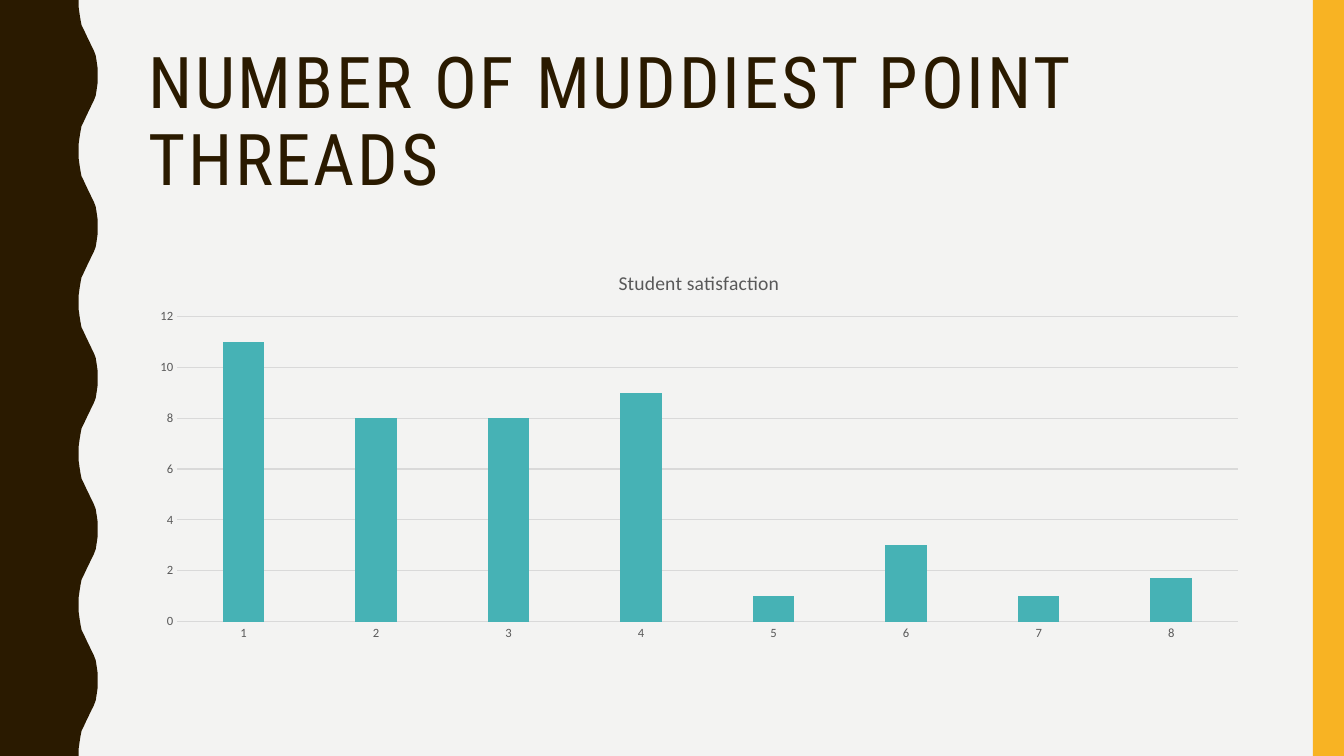
from pptx import Presentation
from pptx.chart.data import CategoryChartData
from pptx.dml.color import RGBColor
from pptx.enum import chart as chart_enum, shapes, text
from pptx.util import Pt

WIDTH, HEIGHT = 960, 540
BROWN, AMBER, TEAL = "2A1A00", "F8B323", "46B2B5"
PAPER, GREY, RULE = "F3F3F2", "595959", "D9D9D9"
HALF_WAVE = [(56.2, 0), (56.2, 5), (56.9, 10), (57.6, 14.4), (58.3, 18),
             (59.8, 21), (61.2, 24), (62.6, 27), (64.1, 30), (65.5, 33),
             (67, 36), (68.4, 39.6), (69.1, 44), (69.8, 49), (69.8, 54)]
THREADS = [11, 8, 8, 9, 1, 3, 1, 1.7]


def color(hex_code):
    """Return the colour for a hex string."""
    return RGBColor.from_string(hex_code)


def paint(shape, hex_code):
    """Give a shape a flat fill without line or shadow."""
    shape.fill.solid()
    shape.fill.fore_color.rgb = color(hex_code)
    shape.line.fill.background()
    shape.shadow.inherit = False


def style_font(font, name, size, hex_code):
    """Set the name, size and colour of a plain font."""
    font.name, font.size, font.bold = name, Pt(size), False
    font.color.rgb = color(hex_code)


def add_wavy_edge(slide, left, top, height):
    """Draw the brown band with a wavy right side."""
    period = 2 * HALF_WAVE[-1][1]
    wave = HALF_WAVE + [(x, period - y) for x, y in reversed(HALF_WAVE[:-1])]
    points = [(left + x, top + cycle * period + y)
              for cycle in range(int(height / period)) for x, y in wave]
    points.append((left, top + height))
    builder = slide.shapes.build_freeform(Pt(left), Pt(top), scale=1)
    builder.add_line_segments([(Pt(x), Pt(y)) for x, y in points], close=True)
    paint(builder.convert_to_shape(), BROWN)


def add_side_bar(slide, left, top, width, height):
    """Draw the amber bar."""
    bar = slide.shapes.add_shape(shapes.MSO_SHAPE.RECTANGLE,
                                 Pt(left), Pt(top), Pt(width), Pt(height))
    paint(bar, AMBER)


def add_title(slide, words, left, top, width, height):
    """Place and format the title placeholder."""
    title = slide.shapes.title
    title.left, title.top = Pt(left), Pt(top)
    title.width, title.height = Pt(width), Pt(height)
    frame = title.text_frame
    frame.text = words
    frame.word_wrap = True
    frame.auto_size = text.MSO_AUTO_SIZE.NONE
    frame.vertical_anchor = text.MSO_ANCHOR.MIDDLE
    paragraph = frame.paragraphs[0]
    paragraph.alignment = text.PP_ALIGN.LEFT
    paragraph.line_spacing = 0.9
    run = paragraph.runs[0]
    style_font(run.font, "Roboto Condensed", 51, BROWN)
    run.font._element.set("spc", "200")


def style_axis(axis):
    """Give an axis small grey labels without tick marks."""
    axis.major_tick_mark = axis.minor_tick_mark = chart_enum.XL_TICK_MARK.NONE
    style_font(axis.tick_labels.font, "Calibri", 9, GREY)


def style_rule(line):
    """Make a line thin and light grey."""
    line.color.rgb = color(RULE)
    line.width = Pt(0.75)


def add_threads_chart(slide, name, values, left, top, width, height):
    """Add the column chart with its title and axes."""
    data = CategoryChartData()
    data.categories = [str(number) for number in range(1, len(values) + 1)]
    data.add_series(name, values)
    chart = slide.shapes.add_chart(
        chart_enum.XL_CHART_TYPE.COLUMN_CLUSTERED,
        Pt(left), Pt(top), Pt(width), Pt(height), data).chart
    style_font(chart.font, "Calibri", 10, "000000")
    chart.has_legend = False
    chart.has_title = True
    chart.chart_title.include_in_layout = False
    frame = chart.chart_title.text_frame
    frame.text = name
    style_font(frame.paragraphs[0].runs[0].font, "Calibri", 14, GREY)

    plot = chart.plots[0]
    plot.gap_width, plot.overlap = 219, -27
    plot.vary_by_categories = False
    fill = plot.series[0].format.fill
    fill.solid()
    fill.fore_color.rgb = color(TEAL)

    style_axis(chart.category_axis)
    style_rule(chart.category_axis.format.line)
    value_axis = chart.value_axis
    style_axis(value_axis)
    value_axis.minimum_scale, value_axis.maximum_scale = 0, 12
    value_axis.major_unit = 2
    value_axis.format.line.fill.background()
    value_axis.has_major_gridlines = True
    style_rule(value_axis.major_gridlines.format.line)


def build_chart_slide(presentation):
    """Build the slide with title, chart and side decoration."""
    slide = presentation.slides.add_slide(presentation.slide_layouts[5])
    slide.background.fill.solid()
    slide.background.fill.fore_color.rgb = color(PAPER)
    left, width, bar_width = 98.6, 801.4, 22.3
    add_wavy_edge(slide, 0, 0, HEIGHT)
    add_side_bar(slide, WIDTH - bar_width, 0, bar_width, HEIGHT)
    add_title(slide, "NUMBER OF MUDDIEST POINT THREADS", left, 30, width, 117.4)
    add_threads_chart(slide, "Student satisfaction", THREADS,
                      left, 180, width, 283)


def main():
    """Create and save the presentation."""
    presentation = Presentation()
    presentation.slide_width, presentation.slide_height = Pt(WIDTH), Pt(HEIGHT)
    build_chart_slide(presentation)
    presentation.save("out.pptx")


if __name__ == "__main__":
    main()
